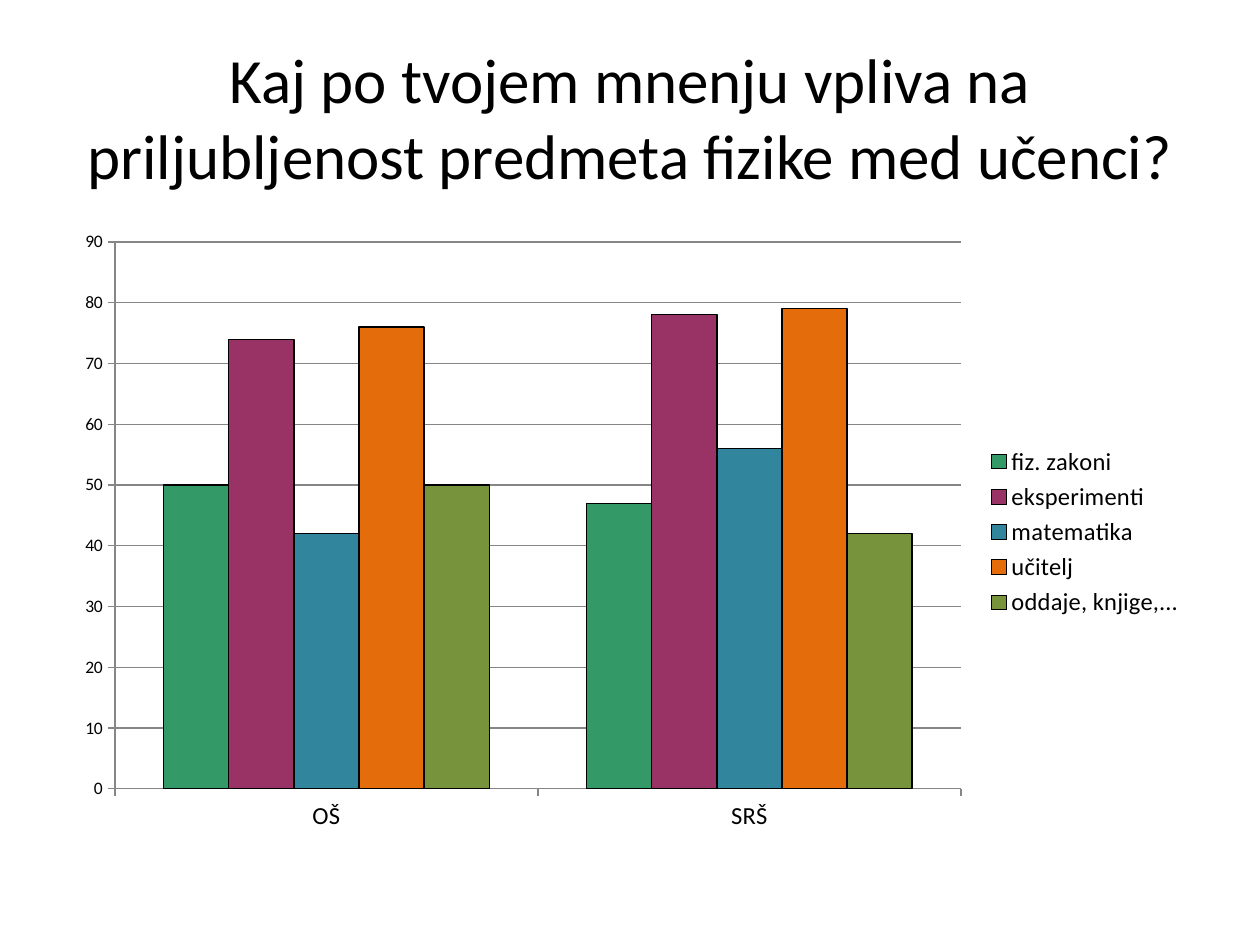
from lxml import etree
from pptx import Presentation
from pptx import util as u
from pptx.chart.data import CategoryChartData
from pptx.dml.color import RGBColor
from pptx.enum import chart as ch, text

SCALE = 914400 / 126


def px(n):
    return u.Emu(round(n * SCALE))


def paint(fmt, color):
    if hasattr(fmt, "solid"):
        fmt.solid()
        fmt.fore_color.rgb = RGBColor.from_string(color)
    else:
        fmt.color.rgb = RGBColor.from_string(color)


prs = Presentation()
prs.slide_width, prs.slide_height = px(1260), px(945)
s = prs.slides.add_slide(prs.slide_layouts[6])

title = s.shapes.add_textbox(px(63), px(38), px(1134), px(157))
tf = title.text_frame
for name, value in {"word_wrap": True, "vertical_anchor": text.MSO_ANCHOR.MIDDLE}.items():
    setattr(tf, name, value)
p = tf.paragraphs[0]
p.alignment = text.PP_ALIGN.CENTER
r = p.add_run()
r.text = "Kaj po tvojem mnenju vpliva na priljubljenost predmeta fizike med učenci?"
for name, value in {"size": u.Pt(36), "name": "Calibri"}.items():
    setattr(r.font, name, value)
paint(r.font, "000000")

series = [
    ("fiz. zakoni", (50, 47), "339966"),
    ("eksperimenti", (74, 78), "993366"),
    ("matematika", (42, 56), "31859C"),
    ("učitelj", (76, 79), "E46C0A"),
    ("oddaje, knjige,...", (50, 42), "77933C"),
]
data = CategoryChartData()
data.categories = ["OŠ", "SRŠ"]
for name, values, color in series:
    data.add_series(name, values)

chart = s.shapes.add_chart(
    ch.XL_CHART_TYPE.COLUMN_CLUSTERED, px(63), px(220), px(1134), px(624), data
).chart
chart.has_title = False
chart.has_legend = True
for name, value in {"size": u.Pt(10), "name": "Calibri"}.items():
    setattr(chart.font, name, value)
paint(chart.font, "000000")

legend = chart.legend
legend.position = ch.XL_LEGEND_POSITION.RIGHT
legend.include_in_layout = False
cat, val = chart.category_axis, chart.value_axis
for part in (legend, cat.tick_labels):
    part.font.size = u.Pt(14)
    part.font.name = "Calibri"
    paint(part.font, "000000")

for name, value in {"minimum_scale": 0, "maximum_scale": 90, "major_unit": 10,
                    "has_major_gridlines": True}.items():
    setattr(val, name, value)
for axis in (cat, val):
    axis.major_tick_mark = ch.XL_TICK_MARK.OUTSIDE
for fmt in (cat.format, val.format, val.major_gridlines.format):
    paint(fmt.line, "868686")
    fmt.line.width = u.Pt(0.75)

plot = chart.plots[0]
for name, value in {"gap_width": 150, "overlap": 0, "vary_by_categories": False}.items():
    setattr(plot, name, value)
for ser, (name, values, color) in zip(plot.series, series):
    paint(ser.format.fill, color)
    paint(ser.format.line, "000000")
    ser.format.line.width = u.Pt(0.75)

NS = "{http://schemas.openxmlformats.org/drawingml/2006/chart}"
area = chart.element.find(f".//{NS}plotArea")
for old in area.findall(f"{NS}layout"):
    area.remove(old)
layout = etree.Element(f"{NS}layout")
area.insert(0, layout)
manual = etree.SubElement(layout, f"{NS}manualLayout")
for tag, value in {"layoutTarget": "inner", "xMode": "edge", "yMode": "edge",
                   "x": 52 / 1134, "y": 22 / 624, "w": 846 / 1134, "h": 547 / 624}.items():
    etree.SubElement(manual, f"{NS}{tag}", val=str(value))

prs.save("out.pptx")
